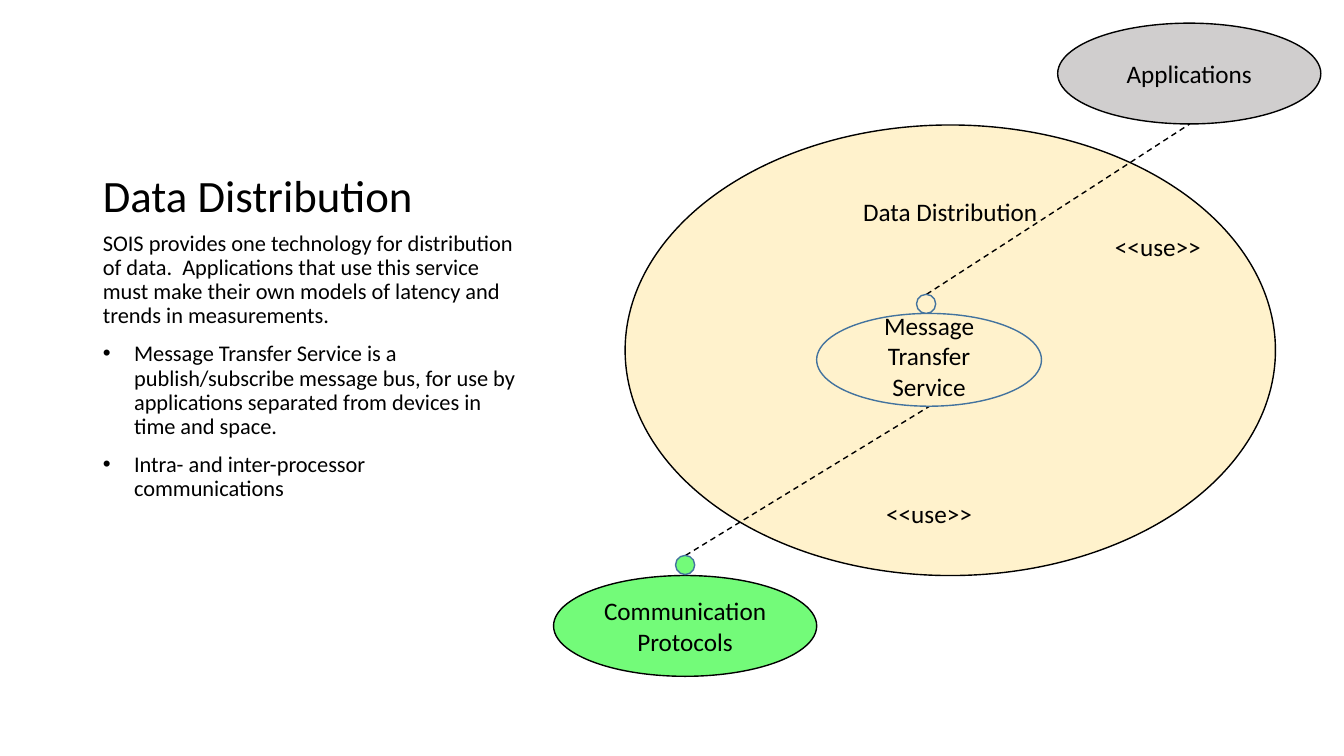
from dataclasses import dataclass

from lxml.etree import SubElement
from pptx import Presentation
from pptx.dml.color import RGBColor
from pptx.enum.dml import MSO_LINE
from pptx.enum.shapes import MSO_CONNECTOR, MSO_SHAPE
from pptx.enum.text import MSO_ANCHOR, MSO_AUTO_SIZE, PP_ALIGN
from pptx.oxml.ns import qn
from pptx.shapes.placeholder import SlidePlaceholder
from pptx.slide import Slide
from pptx.text.text import _Paragraph
from pptx.util import Inches, Pt

FONT = "Calibri"
BLACK, BLUE = "000000", "43739E"
CREAM, GREY, GREEN = "FFF2CC", "D0CECE", "73FB79"
PORT_SIZE = 0.19


@dataclass(frozen=True)
class Oval:
    left: float
    top: float
    width: float
    height: float
    fill: str
    line: str = BLACK
    text: str = ""
    anchor: MSO_ANCHOR = MSO_ANCHOR.MIDDLE
    bottom_inset: float = 0.05


@dataclass(frozen=True)
class Use:
    """A dashed dependency with the place of its label."""
    start: tuple[float, float]
    end: tuple[float, float]
    label: tuple[float, float]


SERVICE_AREAS = [
    Oval(6.2, 1.24, 6.45, 4.47, CREAM, text="Data Distribution", anchor=MSO_ANCHOR.TOP),
    Oval(10.49, 0.23, 2.61, 1, GREY, text="Applications"),
]
USES = [
    Use((9.19, 2.92), (11.8, 1.23), (10.96, 2.25)),
    Use((6.8, 5.51), (9.22, 4.03), (8.69, 4.89)),
]
PROVIDERS = [
    Oval(5.49, 5.71, 2.61, 1, GREEN, text="Communication\vProtocols"),
    Oval(6.7, 5.51, PORT_SIZE, PORT_SIZE, GREEN, BLUE),
    Oval(9.09, 2.92, PORT_SIZE, PORT_SIZE, CREAM, BLUE),
    Oval(8.1, 3.11, 2.23, 0.92, CREAM, BLUE, "Message Transfer Service", bottom_inset=0.13),
]
INTRO = (
    "SOIS provides one technology for distribution of data.  Applications that use "
    "this service must make their own models of latency and trends in measurements."
)
POINTS = [
    "Message Transfer Service is a publish/subscribe message bus, for use by "
    "applications separated from devices in time and space.",
    "Intra- and inter-processor communications",
]


def color(value: str) -> RGBColor:
    return RGBColor.from_string(value)


def format_paragraph(paragraph: _Paragraph, size: float, align: PP_ALIGN = PP_ALIGN.LEFT) -> None:
    paragraph.alignment = align
    paragraph.font.name = FONT
    paragraph.font.size = Pt(size)
    paragraph.font.color.rgb = color(BLACK)


def set_bullet(paragraph: _Paragraph, bullet: str = "") -> None:
    """Give the paragraph a hanging bullet, or no bullet and no indent."""
    properties = paragraph._p.get_or_add_pPr()
    indent = Inches(0.31) if bullet else 0
    properties.set("marL", str(indent))
    properties.set("indent", str(-indent))
    if bullet:
        SubElement(properties, qn("a:buFont"), typeface="Arial")
        SubElement(properties, qn("a:buChar"), char=bullet)
    else:
        SubElement(properties, qn("a:buNone"))


def place(placeholder: SlidePlaceholder, top: float, height: float, anchor: MSO_ANCHOR) -> None:
    placeholder.left, placeholder.top = Inches(0.92), Inches(top)
    placeholder.width, placeholder.height = Inches(4.3), Inches(height)
    placeholder.text_frame.auto_size = MSO_AUTO_SIZE.NONE
    placeholder.text_frame.vertical_anchor = anchor


def add_title(slide: Slide, text: str) -> None:
    title = slide.shapes.title
    place(title, 0.5, 1.75, MSO_ANCHOR.BOTTOM)
    title.text_frame.text = text
    heading = title.text_frame.paragraphs[0]
    format_paragraph(heading, 32)
    heading.line_spacing = 0.9


def add_description(slide: Slide) -> None:
    body = slide.placeholders[1]
    place(body, 2.25, 4.17, MSO_ANCHOR.TOP)
    body.text_frame.text = "\n".join([INTRO, *POINTS])
    for index, paragraph in enumerate(body.text_frame.paragraphs):
        format_paragraph(paragraph, 16)
        paragraph.line_spacing = 0.9
        paragraph.space_before = Pt(10)
        set_bullet(paragraph, "•" if index else "")


def add_oval(slide: Slide, oval: Oval) -> None:
    shape = slide.shapes.add_shape(
        MSO_SHAPE.OVAL, Inches(oval.left), Inches(oval.top), Inches(oval.width), Inches(oval.height)
    )
    shape.shadow.inherit = False
    shape.fill.solid()
    shape.fill.fore_color.rgb = color(oval.fill)
    shape.line.color.rgb = color(oval.line)
    shape.line.width = Pt(1)
    if oval.text:
        frame = shape.text_frame
        frame.text = oval.text
        frame.word_wrap = True
        frame.vertical_anchor = oval.anchor
        frame.margin_bottom = Inches(oval.bottom_inset)
        format_paragraph(frame.paragraphs[0], 18, PP_ALIGN.CENTER)


def add_use_line(slide: Slide, use: Use) -> None:
    ends = [Inches(value) for value in (*use.start, *use.end)]
    connector = slide.shapes.add_connector(MSO_CONNECTOR.STRAIGHT, *ends)
    connector.line.color.rgb = color(BLACK)
    connector.line.width = Pt(1)
    connector.line.dash_style = MSO_LINE.DASH
    SubElement(connector._element.spPr, qn("a:effectLst"))


def add_use_label(slide: Slide, use: Use) -> None:
    left, top = use.label
    label = slide.shapes.add_textbox(Inches(left), Inches(top), Inches(1.06), Inches(0.4))
    label.text_frame.text = "<<use>>"
    label.text_frame.word_wrap = False
    label.text_frame.auto_size = MSO_AUTO_SIZE.SHAPE_TO_FIT_TEXT
    format_paragraph(label.text_frame.paragraphs[0], 18)


def main() -> None:
    presentation = Presentation()
    presentation.slide_width = Inches(13.33)
    presentation.slide_height = Inches(7.5)
    slide = presentation.slides.add_slide(presentation.slide_layouts[1])
    add_title(slide, "Data Distribution")
    add_description(slide)
    for area in SERVICE_AREAS:
        add_oval(slide, area)
    for use in USES:
        add_use_line(slide, use)
        add_use_label(slide, use)
    for provider in PROVIDERS:
        add_oval(slide, provider)
    presentation.save("out.pptx")


if __name__ == "__main__":
    main()
